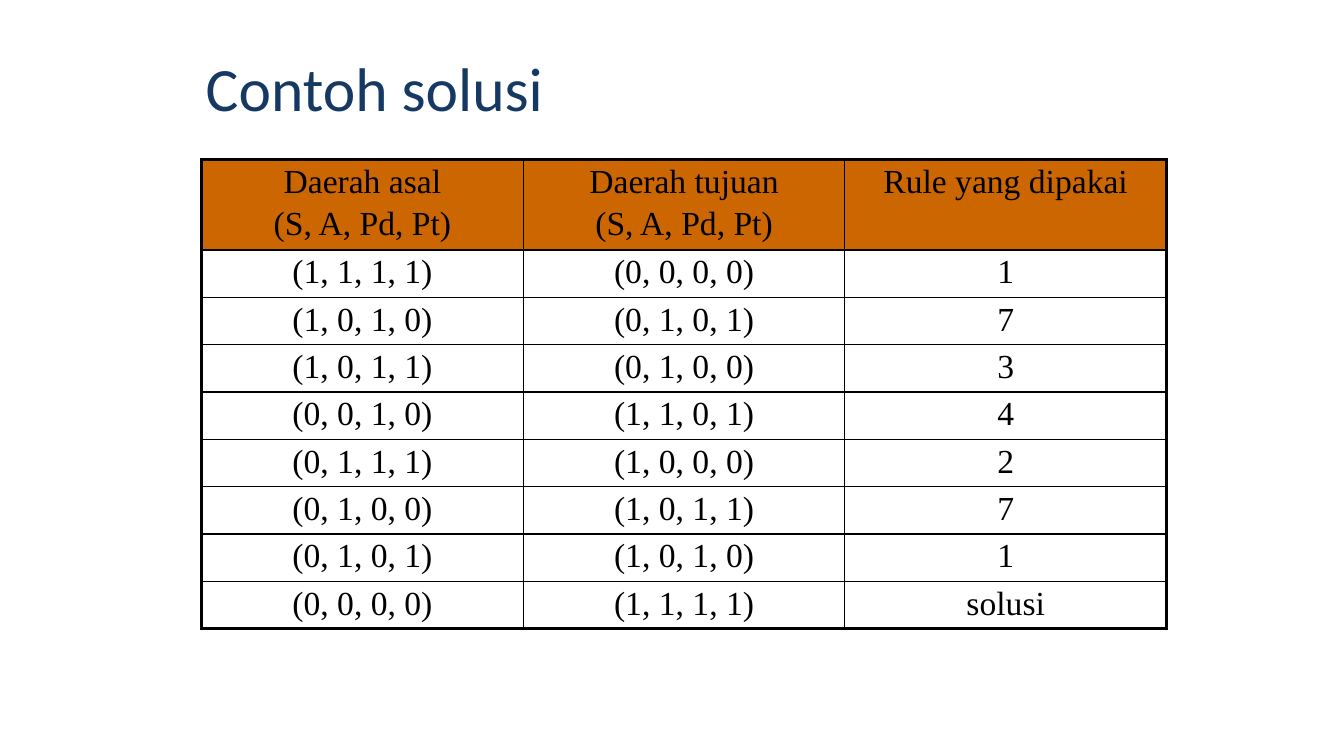
from dataclasses import dataclass

from lxml.etree import SubElement
from pptx import Presentation
from pptx.dml.color import RGBColor
from pptx.enum.text import MSO_ANCHOR as Anchor, MSO_AUTO_SIZE as AutoSize, PP_ALIGN as Align
from pptx.oxml.ns import qn
from pptx.util import Inches, Pt

COLORS = {"title": "163964", "header": "CC6600", "ink": "000000"}
THICK, THIN = 2.25, 1


@dataclass(frozen=True)
class Step:
    origin: str
    target: str
    rule: str

    def texts(self) -> tuple[str, str, str]:
        return self.origin, self.target, self.rule


HEADER = Step("Daerah asal\n(S, A, Pd, Pt)", "Daerah tujuan\n(S, A, Pd, Pt)", "Rule yang dipakai")
STEPS = [
    Step("(1, 1, 1, 1)", "(0, 0, 0, 0)", "1"),
    Step("(1, 0, 1, 0)", "(0, 1, 0, 1)", "7"),
    Step("(1, 0, 1, 1)", "(0, 1, 0, 0)", "3"),
    Step("(0, 0, 1, 0)", "(1, 1, 0, 1)", "4"),
    Step("(0, 1, 1, 1)", "(1, 0, 0, 0)", "2"),
    Step("(0, 1, 0, 0)", "(1, 0, 1, 1)", "7"),
    Step("(0, 1, 0, 1)", "(1, 0, 1, 0)", "1"),
    Step("(0, 0, 0, 0)", "(1, 1, 1, 1)", "solusi"),
]


def write(tf, text: str, *, font: str, size: float, color: str, align=Align.LEFT,
          line: float = 1.0, before: float = 0) -> None:
    for i, part in enumerate(text.split("\n")):
        p = tf.add_paragraph() if i else tf.paragraphs[0]
        p.alignment = align
        p.line_spacing = line
        p.space_before = Pt(before if i else 0)
        r = p.add_run()
        r.text = part
        r.font.name = font
        r.font.size = Pt(size)
        r.font.color.rgb = RGBColor.from_string(COLORS[color])


def set_borders(cell, widths: dict[str, float]) -> None:
    tc_pr = cell._tc.get_or_add_tcPr()
    for side, width in widths.items():
        ln = SubElement(tc_pr, qn(f"a:ln{side}"), w=str(Pt(width)))
        fill = SubElement(ln, qn("a:solidFill"))
        SubElement(fill, qn("a:srgbClr"), val=COLORS["ink"])


def add_title(s, text: str) -> None:
    sp = s.shapes.title
    sp.left, sp.top, sp.width, sp.height = map(Inches, (1.94, 0.28, 9.67, 1.25))
    tf = sp.text_frame
    tf.auto_size = AutoSize.NONE
    tf.vertical_anchor = Anchor.MIDDLE
    write(tf, text, font="Calibri", size=44, color="title", line=0.9)


def add_steps(s, steps: list[Step]) -> None:
    rows, cols = len(steps), 3
    heights = [0.9] + [0.47] * (rows - 1)
    frame = s.shapes.add_table(rows, cols, Inches(2), Inches(1.58), Inches(9.56), Inches(sum(heights)))
    table = frame.table
    table.horz_banding = False
    for column in table.columns:
        column.width = Inches(3.19)
    for i, step in enumerate(steps):
        table.rows[i].height = Inches(heights[i])
        for j, text in enumerate(step.texts()):
            cell = table.cell(i, j)
            cell.margin_left = cell.margin_right = Inches(0.13)
            cell.margin_top = cell.margin_bottom = Inches(0.04)
            cell.vertical_anchor = Anchor.TOP
            set_borders(cell, {
                "L": THICK if j == 0 else THIN,
                "R": THICK if j == cols - 1 else THIN,
                "T": THICK if i == 0 else THIN,
                "B": THICK if i == rows - 1 else THIN,
            })
            if i == 0:
                cell.fill.solid()
                cell.fill.fore_color.rgb = RGBColor.from_string(COLORS["header"])
            else:
                cell.fill.background()
            write(cell.text_frame, text, font="Times New Roman", size=24, color="ink",
                  align=Align.CENTER, before=4)
            for p in cell.text_frame.paragraphs:
                p.font.bold = False
                for r in p.runs:
                    r.font.bold = False


def main() -> None:
    prs = Presentation()
    prs.slide_width, prs.slide_height = Inches(13.33), Inches(7.5)
    s = prs.slides.add_slide(prs.slide_layouts[5])
    add_title(s, "Contoh solusi")
    add_steps(s, [HEADER, *STEPS])
    prs.save("out.pptx")


if __name__ == "__main__":
    main()
